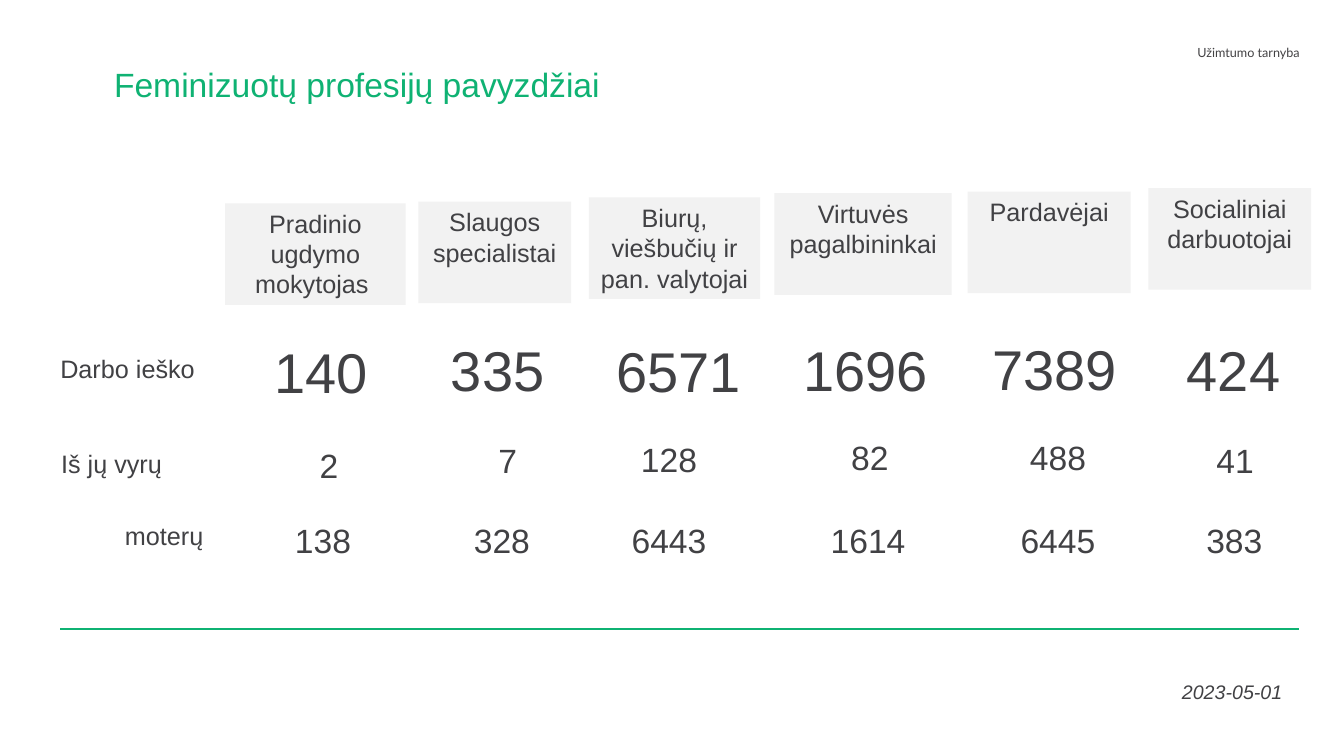
import pptx
import pptx.util
import pptx.dml.color
import pptx.enum.shapes
import pptx.enum.text
import lxml.etree
from dataclasses import dataclass

ALIGN = pptx.enum.text.PP_ALIGN


@dataclass(frozen=True)
class Theme:
    text: str = "414144"
    agency: str = "434244"
    accent: str = "0FB273"
    panel: str = "F2F2F2"
    font: str = "Arial"
    agency_font: str = "Lato"
    tiny: int = 9
    small: int = 14
    body: int = 18
    large: int = 24
    huge: int = 40
    rule: float = 1.5


def rgb(value):
    return pptx.dml.color.RGBColor.from_string(value)


def write(frame, text, size, color, font, align=ALIGN.LEFT, italic=False, spacing=None, indent=0):
    frame.word_wrap = True
    frame.vertical_anchor = pptx.enum.text.MSO_ANCHOR.TOP
    paragraph = frame.paragraphs[0]
    paragraph.alignment = align
    if spacing:
        paragraph.line_spacing = spacing
    if indent:
        properties = paragraph._p.get_or_add_pPr()
        properties.set("marL", str(indent))
        properties.set("indent", "0")
    run = paragraph.add_run()
    run.text = text
    run.font.size = pptx.util.Pt(size)
    run.font.name = font
    run.font.italic = italic
    run.font.color.rgb = rgb(color)


class Board:
    COLUMNS, ROWS = 16, 9

    def __init__(self, deck, theme):
        self.theme = theme
        self.slide = deck.slides.add_slide(deck.slide_layouts[6])
        self.column = deck.slide_width / self.COLUMNS
        self.row = deck.slide_height / self.ROWS

    def place(self, left, top, width, height):
        return (round(left * self.column), round(top * self.row),
                round(width * self.column), round(height * self.row))

    def text(self, area, words, size, color=None, font=None, indent=0, **style):
        box = self.slide.shapes.add_textbox(*self.place(*area))
        write(box.text_frame, words, size, color or self.theme.text, font or self.theme.font,
              indent=round(indent * self.column), **style)

    def panel(self, area, words):
        panel = self.slide.shapes.add_shape(
            pptx.enum.shapes.MSO_SHAPE.RECTANGLE, *self.place(*area))
        panel.shadow.inherit = False
        panel.fill.solid()
        panel.fill.fore_color.rgb = rgb(self.theme.panel)
        panel.line.fill.background()
        write(panel.text_frame, words, self.theme.body, self.theme.text, self.theme.font,
              align=ALIGN.CENTER)

    def rule(self, left, right, level):
        x, y, length, _ = self.place(left, level, right - left, 0)
        rule = self.slide.shapes.add_connector(
            pptx.enum.shapes.MSO_CONNECTOR.STRAIGHT, x, y, x + length, y)
        rule.line.color.rgb = rgb(self.theme.accent)
        rule.line.width = pptx.util.Pt(self.theme.rule)
        lxml.etree.SubElement(rule._element.spPr, pptx.oxml.ns.qn("a:effectLst"))


PROFESSIONS = [
    ("Pradinio ugdymo mokytojas ", (2.68, 2.42, 2.15)),
    ("Slaugos specialistai", (4.98, 2.4, 1.82)),
    ("Biurų, viešbučių ir pan. valytojai", (7.01, 2.35, 2.04)),
    ("Virtuvės pagalbininkai", (9.22, 2.3, 2.11)),
    ("Pardavėjai", (11.52, 2.28, 1.94)),
    ("Socialiniai darbuotojai", (13.67, 2.24, 1.94)),
]
SEEKERS = [("140", 2.75, 3.96), ("335", 4.85, 3.94), ("6571", 7, 3.95),
           ("1696", 9.23, 3.94), ("7389", 11.48, 3.92), ("424", 13.61, 3.94)]
MEN = [("2", 2.84, 5.24), ("7", 4.97, 5.18), ("128", 6.89, 5.17),
       ("82", 9.28, 5.14), ("488", 11.52, 5.14), ("41", 13.63, 5.18)]
WOMEN = [("138", 2.77, 6.13), ("328", 4.9, 6.13), ("6443", 6.89, 6.13),
         ("1614", 9.26, 6.13), ("6445", 11.52, 6.13), ("383", 13.62, 6.13)]
ROW_LABELS = [("Darbo ieško", 0.6, 4.15, 0), ("Iš jų vyrų", 0.61, 5.28, 0),
              ("moterų", 0.71, 6.14, 0.66)]
CELL_WIDTH = 2.15


def main():
    deck = pptx.Presentation()
    deck.slide_width = pptx.util.Inches(13.33)
    deck.slide_height = pptx.util.Inches(7.5)
    theme = Theme()
    board = Board(deck, theme)

    board.text((10.19, 0.47, 5.4, 0.56), "Užimtumo tarnyba", theme.tiny,
               color=theme.agency, font=theme.agency_font, align=ALIGN.RIGHT)
    board.text((1.24, 0.76, 13.52, 0.67), "Feminizuotų profesijų pavyzdžiai", theme.large,
               color=theme.accent, spacing=0.9)

    for profession, (left, top, width) in PROFESSIONS:
        board.panel((left, top, width, 1.21), profession)
    for label, left, top, indent in ROW_LABELS:
        board.text((left, top, CELL_WIDTH, 0.48), label, theme.body, indent=indent)
    for counts, size, height in ((SEEKERS, theme.huge, 0.92), (MEN, theme.large, 0.6),
                                 (WOMEN, theme.large, 0.6)):
        for count, left, top in counts:
            board.text((left, top, CELL_WIDTH, height), count, size, align=ALIGN.CENTER)

    board.rule(0.72, 15.46, 7.49)
    board.text((13.3, 8.04, CELL_WIDTH, 0.41), "2023-05-01 ", theme.small,
               align=ALIGN.RIGHT, italic=True)
    deck.save("out.pptx")


if __name__ == "__main__":
    main()
